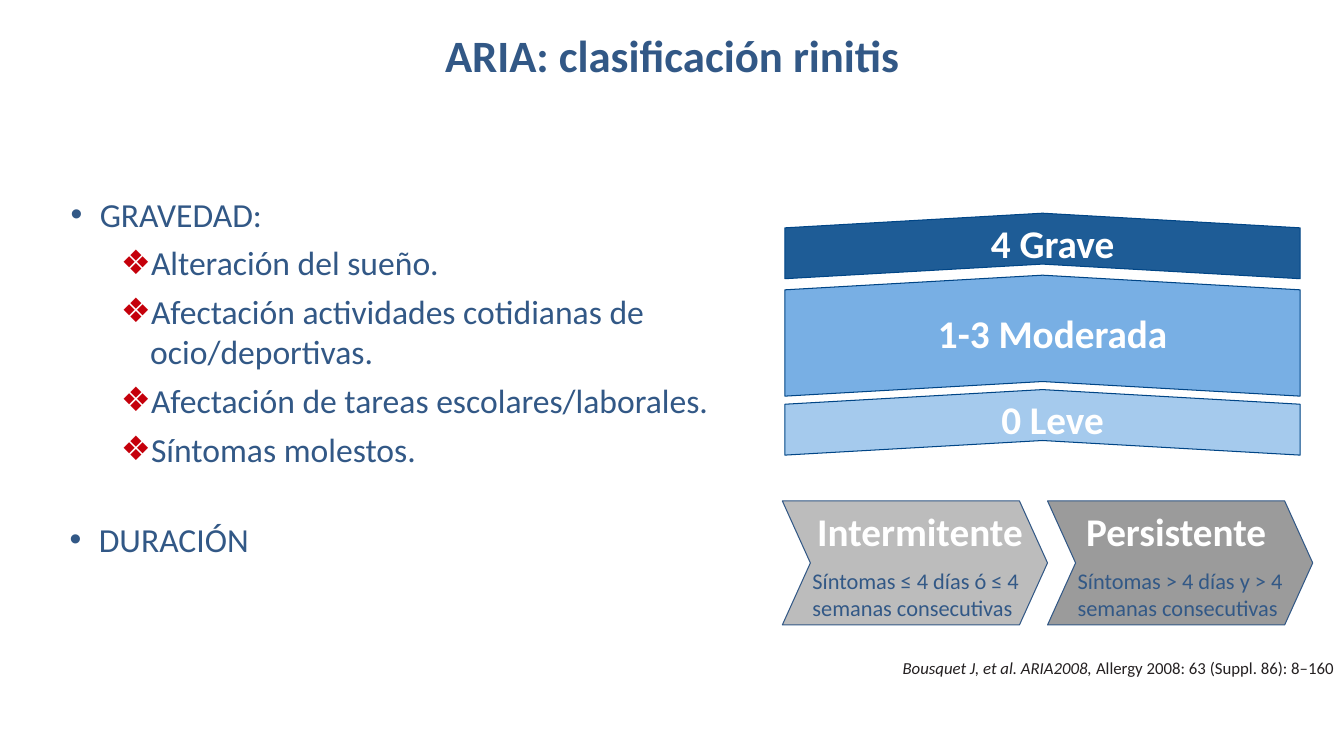
"""Build the slide on the ARIA classes of rhinitis."""
import pptx
import pptx.dml.color
import pptx.enum.shapes
import pptx.enum.text
import pptx.oxml
import pptx.oxml.ns
import pptx.util

Inches = pptx.util.Inches
Pt = pptx.util.Pt
Color = pptx.dml.color.RGBColor.from_string
Align = pptx.enum.text.PP_ALIGN
Anchor = pptx.enum.text.MSO_ANCHOR


class Theme:
    font = "Calibri"
    navy, white, ink, red = "325886", "FFFFFF", "242021", "C5000B"
    edge = "004586"
    dark, mid, pale = "1E5C96", "78AFE4", "A5CAED"
    gray, steel = "BCBCBC", "9B9B9B"
    head, label, body, note, cite = 32, 28, 24, 16, 12


def assign(item, values):
    for name, value in values.items():
        setattr(item, name, value)


def place(shape, box):
    names = ("left", "top", "width", "height")
    assign(shape, {name: Inches(size) for name, size in zip(names, box)})


def style(font, size, color, **more):
    assign(font, {"name": Theme.font, "size": Pt(size), **more})
    font.color.rgb = Color(color)


def frame(shape, anchor):
    assign(shape.text_frame, {
        "word_wrap": True,
        "auto_size": pptx.enum.text.MSO_AUTO_SIZE.NONE,
        "vertical_anchor": anchor,
        "margin_left": Inches(0.1), "margin_right": Inches(0.1),
        "margin_top": Inches(0.05), "margin_bottom": Inches(0.05)})
    return shape.text_frame


def write(shape, text, size, color, align, anchor=Anchor.MIDDLE, **more):
    para = frame(shape, anchor).paragraphs[0]
    para.alignment = align
    run = para.add_run()
    run.text = text
    style(run.font, size, color, **more)
    return para


def label(slide, box, *args, **more):
    shape = slide.shapes.add_textbox(*map(Inches, box))
    return write(shape, *args, **more)


def bullet(para, mark, color, left):
    props = para._p.get_or_add_pPr()
    props.set("marL", str(Inches(left)))
    props.set("indent", str(Inches(-0.29)))
    space = pptx.oxml.ns.nsdecls("a")
    for xml in (f'<a:buClr {space}><a:srgbClr val="{color}"/></a:buClr>',
                f'<a:buFont {space} typeface="Arial"/>',
                f'<a:buChar {space} char="{mark}"/>'):
        props.append(pptx.oxml.parse_xml(xml))


def outline(holder, box, items):
    place(holder, box)
    text = frame(holder, Anchor.TOP)
    for i, (level, words) in enumerate(items):
        para = text.add_paragraph() if i else text.paragraphs[0]
        assign(para, {"text": words, "level": level, "line_spacing": 1.0,
                      "space_before": Pt(6 if i else 0)})
        if level:
            bullet(para, "❖", Theme.red, 1.38)
        else:
            bullet(para, "•", Theme.navy, 0.88)
        style(para.font, Theme.body, Theme.navy)
        for run in para.runs:
            style(run.font, Theme.body, Theme.navy)


def chevron(slide, box, fill, edge, bend, turn=0):
    kind = pptx.enum.shapes.MSO_SHAPE.CHEVRON
    shape = slide.shapes.add_shape(kind, *map(Inches, box))
    shape.shadow.inherit = False
    shape.rotation = turn
    shape.adjustments[0] = bend
    shape.fill.solid()
    shape.fill.fore_color.rgb = Color(fill)
    shape.line.color.rgb = Color(edge)
    shape.line.width = Pt(0.75)


def band(slide, words, mid, depth, fill):
    """Draw an upward band centred at height mid, with its label."""
    span, axis = 5.11, 10.34
    box = (axis - depth / 2, mid - span / 2, depth, span)
    chevron(slide, box, fill, Theme.edge, 0.145 / depth, 270)
    label(slide, (axis - 1.2, mid - 0.2, 2.6, 0.34), words,
          Theme.label, Theme.white, Align.CENTER, bold=True)


def step(slide, left, head, words, fill, start):
    chevron(slide, (left, 4.97, 2.63, 1.23), fill, Theme.navy, 0.226)
    label(slide, (left + 0.2, 5.63, 2.3, 0.52), words,
          Theme.note, Theme.navy, Align.LEFT)
    label(slide, (start, 4.94, 2.37, 0.66), head,
          Theme.label, Theme.white, Align.CENTER, bold=True)


def main():
    deck = pptx.Presentation()
    deck.slide_width, deck.slide_height = Inches(13.33), Inches(7.5)
    slide = deck.slides.add_slide(deck.slide_layouts[3])
    title, signs, time = slide.placeholders

    place(title, (0.67, 0.21, 12, 0.66))
    write(title, "ARIA: clasificación rinitis", Theme.head, Theme.navy,
          Align.CENTER, bold=True)
    outline(signs, (0.01, 1.87, 7.69, 2.9), [
        (0, "GRAVEDAD:"),
        (1, "Alteración del sueño."),
        (1, "Afectación actividades cotidianas de ocio/deportivas."),
        (1, "Afectación de tareas escolares/laborales."),
        (1, "Síntomas molestos.")])
    outline(time, (0, 5.1, 7.69, 0.78), [(0, "DURACIÓN")])

    for row in (("0 Leve", 4.19, 0.65, Theme.pale),
                ("1-3 Moderada", 3.33, 1.2, Theme.mid),
                ("4 Grave", 2.44, 0.65, Theme.dark)):
        band(slide, *row)
    step(slide, 7.76, "Intermitente",
         "Síntomas ≤ 4 días ó ≤ 4 semanas consecutivas", Theme.gray, 7.94)
    step(slide, 10.39, "Persistente",
         "Síntomas > 4 días y > 4 semanas consecutivas", Theme.steel, 10.48)

    cite = label(slide, (0.67, 6.48, 12.66, 0.32),
                 "Bousquet J, et al. ARIA2008, ", Theme.cite, Theme.ink,
                 Align.RIGHT, Anchor.TOP, italic=True)
    run = cite.add_run()
    run.text = "Allergy 2008: 63 (Suppl. 86): 8–160"
    style(run.font, Theme.cite, Theme.ink, italic=False)
    deck.save("out.pptx")


if __name__ == "__main__":
    main()
